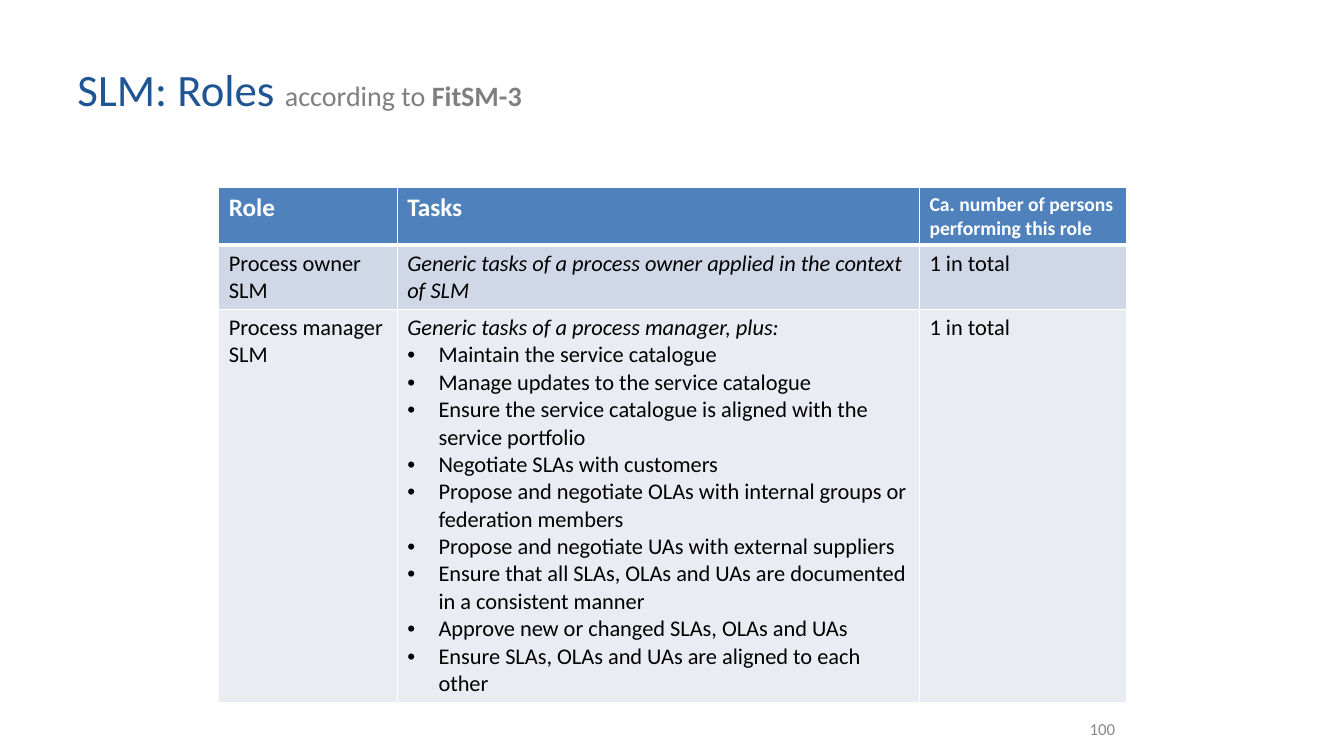
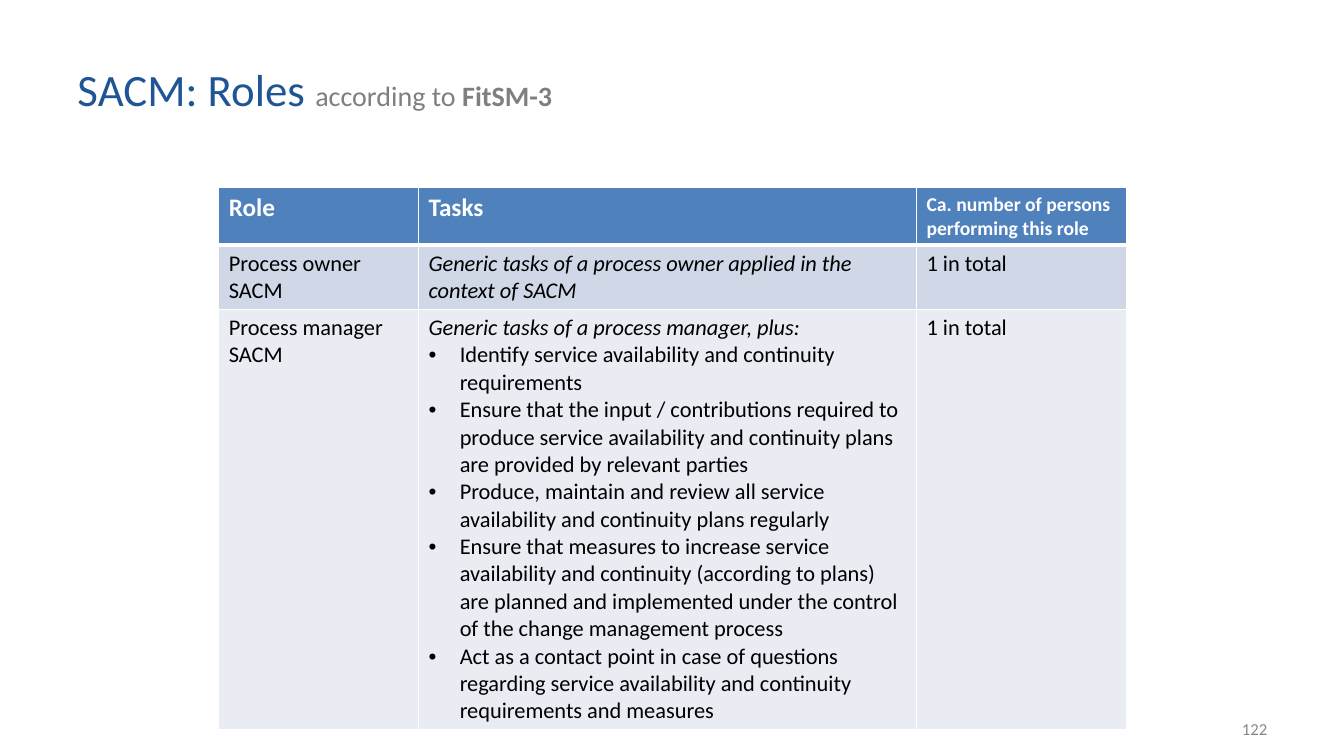
import pptx
import pptx.dml.color
import pptx.enum.text
import pptx.oxml
import pptx.oxml.ns
import pptx.util
from pptx.util import Inches

FONT = "Calibri"
BLUE, GREY, PAGE = "205595", "7F7F7F", "888888"
HEAD, BAND, PALE = "4F81BD", "D0D8E7", "E9ECF3"
WHITE, BLACK = "FFFFFF", "000000"
THIN, THICK = 0.96, 3
INDENT = 0.31


def color(code):
    return pptx.dml.color.RGBColor.from_string(code)


def node(tag, body="", **attrs):
    text = "".join(f' {key}="{val}"' for key, val in attrs.items())
    space = pptx.oxml.ns.nsdecls("a")
    return pptx.oxml.parse_xml(f"<a:{tag} {space}{text}>{body}</a:{tag}>")


class Deck:
    def __init__(self):
        self.show = pptx.Presentation()
        self.show.slide_width = Inches(13.33)
        self.show.slide_height = Inches(7.5)
        self.slide = None

    def add(self):
        self.slide = self.show.slides.add_slide(self.show.slide_layouts[6])

    def style(self, font, size, code, bold=False, italic=False):
        font.name = FONT
        font.size = pptx.util.Pt(size)
        font.color.rgb = color(code)
        font.bold = bold
        font.italic = italic

    def box(self, left, top, width, height):
        shape = self.slide.shapes.add_textbox(
            Inches(left), Inches(top), Inches(width), Inches(height))
        frame = shape.text_frame
        frame.word_wrap = True
        frame.vertical_anchor = pptx.enum.text.MSO_ANCHOR.MIDDLE
        return frame.paragraphs[0]

    def title(self, name):
        para = self.box(0.67, 0.3, 9.91, 1.15)
        parts = [(f"{name}: Roles ", 32, BLUE, False),
                 ("according to ", 20, GREY, False),
                 ("FitSM-3", 20, GREY, True)]
        for text, size, code, bold in parts:
            run = para.add_run()
            run.text = text
            self.style(run.font, size, code, bold)

    def number(self, value, right):
        para = self.box(right - 2.33, 7.03, 2.33, 0.4)
        para.text = str(value)
        para.alignment = pptx.enum.text.PP_ALIGN.RIGHT
        self.style(para.font, 12, PAGE)

    def bullet(self, para):
        props = para._p.get_or_add_pPr()
        props.set("marL", str(Inches(INDENT)))
        props.set("indent", str(-Inches(INDENT)))
        props.append(node("buClr", f'<a:srgbClr val="{BLACK}"/>'))
        props.append(node("buFont", typeface="Arial"))
        props.append(node("buChar", char="•"))

    def edges(self, cell, top, bottom):
        props = cell._tc.get_or_add_tcPr()
        fill = f'<a:solidFill><a:srgbClr val="{WHITE}"/></a:solidFill>'
        for side, width in zip("LRTB", (THIN, THIN, top, bottom)):
            props.append(node(f"ln{side}", fill, w=pptx.util.Pt(width)))

    def cell(self, cell, lines, row, size, italic):
        self.edges(cell, THICK if row == 1 else THIN,
                   THICK if row == 0 else THIN)
        cell.fill.solid()
        cell.fill.fore_color.rgb = color((HEAD, BAND, PALE)[row])
        frame = cell.text_frame
        for at, line in enumerate(lines):
            para = frame.add_paragraph() if at else frame.paragraphs[0]
            para.text = line
            if at:
                self.bullet(para)
            self.style(para.font, size, BLACK if row else WHITE,
                       bold=row == 0, italic=italic and at == 0)

    def table(self, name, tasks, cols, rows):
        grid = [
            (["Role"], ["Tasks"],
             ["Ca. number of persons performing this role"]),
            ([f"Process owner {name}"],
             ["Generic tasks of a process owner applied in the context "
              f"of {name}"],
             ["1 in total"]),
            ([f"Process manager {name}"],
             ["Generic tasks of a process manager, plus:", *tasks],
             ["1 in total"]),
        ]
        table = self.slide.shapes.add_table(
            len(rows), len(cols), Inches(2.17), Inches(1.86),
            Inches(sum(cols)), Inches(sum(rows))).table
        for col, width in zip(table.columns, cols):
            col.width = Inches(width)
        for row, height in zip(table.rows, rows):
            row.height = Inches(height)
        for row, line in enumerate(grid):
            for col, text in enumerate(line):
                size = 16 if row else (18, 18, 14)[col]
                self.cell(table.cell(row, col), text, row, size,
                          italic=row > 0 and col == 1)


def main():
    deck = Deck()

    # Service level management
    deck.add()
    deck.title("SLM")
    deck.table("SLM", [
        "Maintain the service catalogue",
        "Manage updates to the service catalogue",
        "Ensure the service catalogue is aligned with the service portfolio",
        "Negotiate SLAs with customers",
        "Propose and negotiate OLAs with internal groups or federation members",
        "Propose and negotiate UAs with external suppliers",
        "Ensure that all SLAs, OLAs and UAs are documented in a consistent "
        "manner",
        "Approve new or changed SLAs, OLAs and UAs",
        "Ensure SLAs, OLAs and UAs are aligned to each other",
    ], (1.77, 5.18, 2.05), (0.56, 0.64, 3.9))
    deck.number(100, 11.16)

    # Service availability and continuity management
    deck.add()
    deck.title("SACM")
    deck.table("SACM", [
        "Identify service availability and continuity requirements",
        "Ensure that the input / contributions required to produce service "
        "availability and continuity plans are provided by relevant parties",
        "Produce, maintain and review all service availability and continuity "
        "plans regularly",
        "Ensure that measures to increase service availability and continuity "
        "(according to plans) are planned and implemented under the control "
        "of the change management process",
        "Act as a contact point in case of questions regarding service "
        "availability and continuity requirements and measures",
    ], (1.98, 4.94, 2.08), (0.56, 0.64, 4.17))
    deck.number(122, 12.67)

    deck.show.save("out.pptx")


if __name__ == "__main__":
    main()
